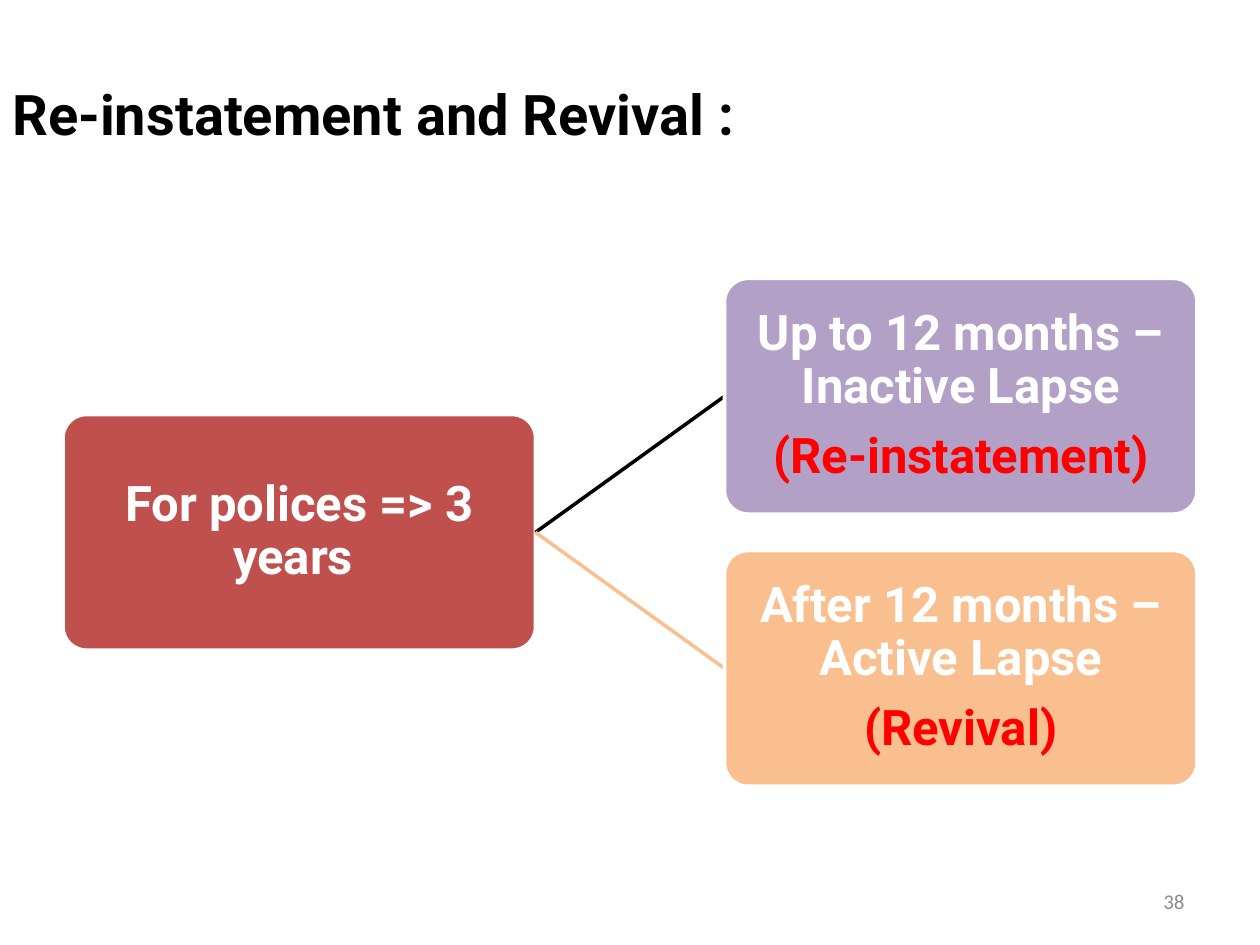
import pptx
import pptx.util
import pptx.dml.color
import pptx.enum.shapes
import pptx.enum.text
import pptx.oxml.ns
import lxml.etree

Inches = pptx.util.Inches
Pt = pptx.util.Pt
Align = pptx.enum.text.PP_ALIGN
Anchor = pptx.enum.text.MSO_ANCHOR
COLORS = {
    "white": "FFFFFF", "black": "000000", "gray": "8C8C8C",
    "red": "FF0000", "brick": "BF504D", "mauve": "B2A0C7", "peach": "FABF8E",
}


def color(name):
    return pptx.dml.color.RGBColor.from_string(COLORS[name])


def add_run(para, text, size, hue, face="Roboto", bold=True):
    run = para.add_run()
    run.text = text
    font = run.font
    font.size, font.name, font.bold = Pt(size), face, bold
    font.color.rgb = color(hue)


def add_text(slide, box, text, size, hue, align, **style):
    shape = slide.shapes.add_textbox(*map(Inches, box))
    frame = shape.text_frame
    frame.word_wrap = True
    frame.vertical_anchor = Anchor.MIDDLE
    para = frame.paragraphs[0]
    para.alignment = align
    add_run(para, text, size, hue, **style)


def add_node(slide, box, fill, lines):
    kind = pptx.enum.shapes.MSO_SHAPE.ROUNDED_RECTANGLE
    node = slide.shapes.add_shape(kind, *map(Inches, box))
    node.adjustments[0] = 0.1
    node.shadow.inherit = False
    node.fill.solid()
    node.fill.fore_color.rgb = color(fill)
    node.line.color.rgb = color("white")
    node.line.width = Pt(2)
    frame = node.text_frame
    frame.word_wrap = True
    frame.vertical_anchor = Anchor.MIDDLE
    frame.margin_left = frame.margin_right = Inches(0.02)
    frame.margin_top = frame.margin_bottom = Inches(0.02)
    for i, (text, hue) in enumerate(lines):
        para = frame.add_paragraph() if i else frame.paragraphs[0]
        para.alignment = Align.CENTER
        para.line_spacing = 0.9
        if i:
            para.space_before = Pt(9.8)
        add_run(para, text, 28, hue)
    return node


def add_link(slide, root, hue):
    kind = pptx.enum.shapes.MSO_CONNECTOR.STRAIGHT
    link = slide.shapes.add_connector(kind, 0, 0, 0, 0)
    link.line.color.rgb = color(hue)
    link.line.width = Pt(2)
    props = link._element.spPr
    lxml.etree.SubElement(props, pptx.oxml.ns.qn("a:effectLst"))
    link.begin_connect(root, 3)
    return link


def add_tree(slide, box, root_text, items):
    left, top, width, height = box
    node_w, node_h = 3.75, 1.87
    step = (height - node_h) / (len(items) - 1)
    mid = top + (height - node_h) / 2
    root = add_node(slide, (left, mid, node_w, node_h), "brick",
                    [(root_text, "white")])
    for i, (text, note, fill, hue) in enumerate(items):
        link = add_link(slide, root, hue)
        place = (left + width - node_w, top + i * step, node_w, node_h)
        leaf = add_node(slide, place, fill, [(text, "white"), (note, "red")])
        link.end_connect(leaf, 1)


def main():
    deck = pptx.Presentation()
    deck.slide_width, deck.slide_height = Inches(10), Inches(7.5)
    slide = deck.slides.add_slide(deck.slide_layouts[6])
    add_text(slide, (0, 0.58, 6.29, 0.64), "Re-instatement and Revival :",
             32, "black", Align.LEFT)
    add_tree(slide, (0.5, 2.21, 9, 4.03), "For polices => 3 years ", [
        ("Up to 12 months –Inactive Lapse", "(Re-instatement)", "mauve", "black"),
        ("After 12 months –Active Lapse", "(Revival)", "peach", "peach"),
    ])
    add_text(slide, (7.17, 6.95, 2.33, 0.4), "38", 12, "gray", Align.RIGHT,
             face="Calibri", bold=False)
    deck.save("out.pptx")


if __name__ == "__main__":
    main()
